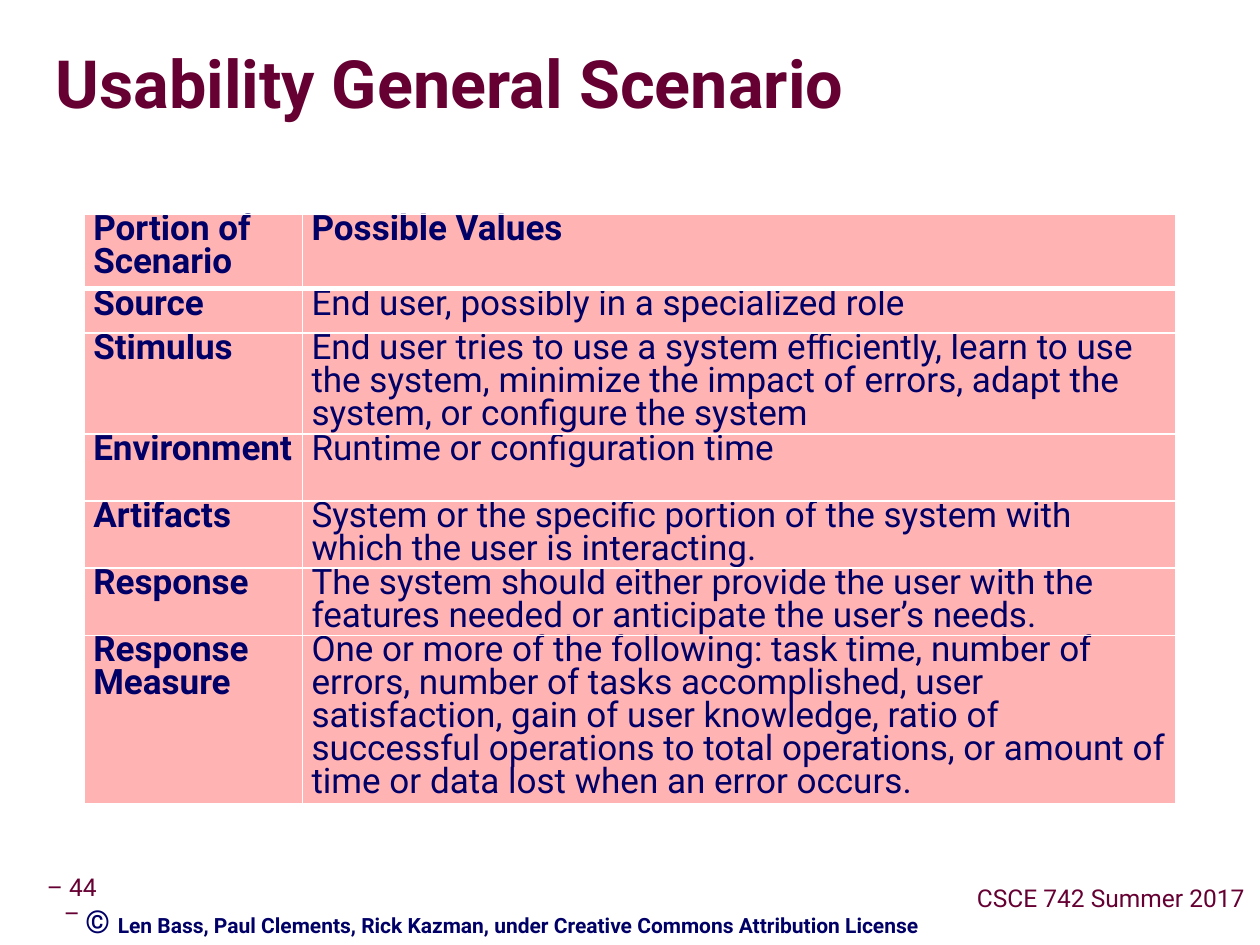
from lxml.etree import SubElement
from pptx import Presentation
from pptx.dml.color import RGBColor
from pptx.enum.text import MSO_ANCHOR as Anchor, MSO_AUTO_SIZE as AutoSize, PP_ALIGN as Align
from pptx.oxml import parse_xml
from pptx.oxml.ns import nsdecls, qn
from pptx.util import Cm, Pt

FONT = "Roboto"
MAROON, NAVY, PINK, WHITE, GREY = "660033", "000066", "FFB3B3", "FFFFFF", "969696"

# Portion of the scenario, possible values, row height in cm
SCENARIO_ROWS = [
    ("Portion of\nScenario", "Possible Values", 1.5),
    ("Source", "End user, possibly in a specialized role", 0.89),
    ("Stimulus", "End user tries to use a system efficiently, learn to use the system, "
     "minimize the impact of errors, adapt the system, or configure the system", 2.03),
    ("Environment", "Runtime or configuration time", 1.35),
    ("Artifacts", "System or the specific portion of the system with which the user "
     "is interacting.", 1.35),
    ("Response", "The system should either provide the user with the features needed "
     "or anticipate the user’s needs.", 1.35),
    ("Response Measure", "One or more of the following: task time, number of errors, "
     "number of tasks accomplished, user satisfaction, gain of user knowledge, ratio of "
     "successful operations to total operations, or amount of time or data lost when an "
     "error occurs.", 3.38),
]
LONG_ROWS = ("Stimulus", "Response Measure")


def color(value):
    return RGBColor.from_string(value)


def add_run(paragraph, text, size, fill, bold=False):
    run = paragraph.add_run()
    run.text = text
    run.font.size = Pt(size)
    run.font.bold = bold
    run.font.color.rgb = color(fill)
    run.font.name = FONT
    return run


def set_insets(frame, horizontal, vertical):
    frame.margin_left = frame.margin_right = Cm(horizontal)
    frame.margin_top = frame.margin_bottom = Cm(vertical)


def add_text_shadow(run):
    properties = run.font._element
    effects = parse_xml(
        f'<a:effectLst {nsdecls("a")}><a:outerShdw dist="38100" dir="2700000">'
        f'<a:srgbClr val="{GREY}"/></a:outerShdw></a:effectLst>')
    properties.find(qn("a:solidFill")).addnext(effects)


def add_title(slide, left, top, width, height):
    title = slide.shapes.title
    title.left, title.top, title.width, title.height = map(Cm, (left, top, width, height))
    frame = title.text_frame
    set_insets(frame, 0, 0)
    frame.vertical_anchor = Anchor.MIDDLE
    frame.auto_size = AutoSize.NONE
    paragraph = frame.paragraphs[0]
    paragraph.alignment = Align.LEFT
    paragraph.line_spacing = 0.87
    add_text_shadow(add_run(paragraph, "Usability General Scenario", 38, MAROON, True))


def add_text_box(slide, left, top, width, height):
    frame = slide.shapes.add_textbox(*map(Cm, (left, top, width, height))).text_frame
    frame.word_wrap = True
    return frame


def add_footer_label(slide, text, left, top, width, height):
    frame = add_text_box(slide, left, top, width, height)
    set_insets(frame, 0.13, 0.13)
    frame.vertical_anchor = Anchor.MIDDLE
    paragraph = frame.paragraphs[0]
    paragraph.alignment = Align.CENTER
    paragraph.line_spacing = 0.9
    add_run(paragraph, text, 14, MAROON)


def add_license(slide, left, top, width, height):
    paragraph = add_text_box(slide, left, top, width, height).paragraphs[0]
    add_run(paragraph, "© ", 18, NAVY, True)
    add_run(paragraph, "Len Bass, Paul Clements, Rick Kazman, under Creative Commons "
            "Attribution License", 12, NAVY, True)


def set_borders(cell, top_width, bottom_width):
    properties = cell._tc.get_or_add_tcPr()
    widths = {"lnL": 1, "lnR": 1, "lnT": top_width, "lnB": bottom_width}
    for position, (side, width) in enumerate(widths.items()):
        line = SubElement(properties, qn(f"a:{side}"), w=str(Pt(width)))
        fill = SubElement(line, qn("a:solidFill"))
        SubElement(fill, qn("a:srgbClr"), val=WHITE)
        properties.insert(position, line)


def fill_cell(cell, text, bold, space_before, space_after):
    cell.fill.solid()
    cell.fill.fore_color.rgb = color(PINK)
    cell.margin_left = cell.margin_right = Cm(0.18)
    cell.margin_top = cell.margin_bottom = 0
    paragraph = cell.text_frame.paragraphs[0]
    paragraph.line_spacing = 0.8
    paragraph.space_before, paragraph.space_after = Pt(space_before), Pt(space_after)
    for index, line in enumerate(text.split("\n")):
        if index:
            paragraph.add_line_break()
        add_run(paragraph, line, 20, NAVY, bold)


def add_scenario_table(slide, left, top, width):
    height = sum(row[2] for row in SCENARIO_ROWS)
    table = slide.shapes.add_table(
        len(SCENARIO_ROWS), 2, *map(Cm, (left, top, width, height))).table
    table.horz_banding = False
    table.columns[0].width = Cm(width * 0.2)
    table.columns[1].width = Cm(width * 0.8)
    for row, (portion, values, row_height) in enumerate(SCENARIO_ROWS):
        table.rows[row].height = Cm(row_height)
        spacing = (1, 3) if portion in LONG_ROWS else (0, 4)
        fill_cell(table.cell(row, 0), portion, True, 0, 4)
        fill_cell(table.cell(row, 1), values, row == 0, 0, spacing[1])
        for column in range(2):
            # A thick rule separates the header from the rows below it
            set_borders(table.cell(row, column),
                        3 if row == 1 else 1, 3 if row == 0 else 1)


def main():
    presentation = Presentation()
    presentation.slide_width, presentation.slide_height = Cm(25.4), Cm(19.05)
    slide = presentation.slides.add_slide(presentation.slide_layouts[5])

    # Footer labels
    add_footer_label(slide, "– 44 –", 0.61, 17.78, 1.68, 0.79)
    add_footer_label(slide, "CSCE 742 Summer 2017", 19.46, 17.75, 5.87, 0.79)
    # Title and scenario table
    add_title(slide, 1.12, 0.69, 24.2, 2.16)
    add_scenario_table(slide, 1.7, 4.32, 22)
    # License line
    add_license(slide, 1.47, 18.06, 18.62, 0.79)

    presentation.save("out.pptx")


if __name__ == "__main__":
    main()
